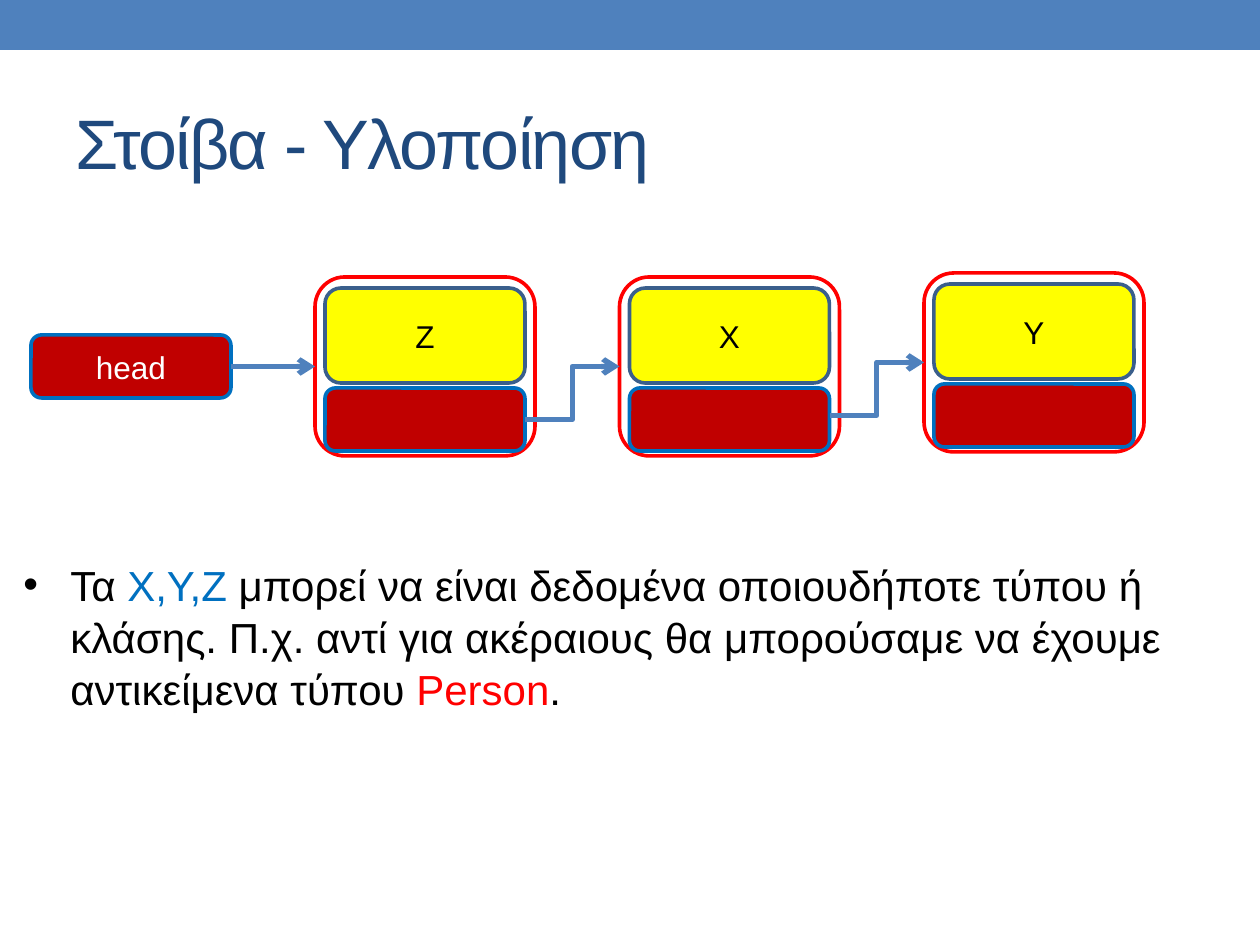
from lxml.etree import SubElement
from pptx import Presentation
from pptx.dml.color import RGBColor
from pptx.enum.shapes import MSO_CONNECTOR, MSO_SHAPE
from pptx.enum.text import MSO_ANCHOR, PP_ALIGN
from pptx.oxml.ns import qn
from pptx.util import Pt

BLUE = RGBColor(0x4F, 0x81, 0xBD)
NAVY = RGBColor(0x1F, 0x49, 0x7D)
SLATE = RGBColor(0x3A, 0x5F, 0x8C)
SKY = RGBColor(0x00, 0x70, 0xC0)
RED = RGBColor(0xFF, 0x00, 0x00)
CRIMSON = RGBColor(0xC0, 0x00, 0x00)
YELLOW = RGBColor(0xFF, 0xFF, 0x00)
BLACK = RGBColor(0x00, 0x00, 0x00)
WHITE = RGBColor(0xFF, 0xFF, 0xFF)

TITLE = "Στοίβα - Υλοποίηση"
HEAD = "head"
NODES = [("Z", 277), ("X", 277), ("Y", 273)]
NOTE = [
    ("Τα ", BLACK),
    ("Χ,Υ,Ζ ", SKY),
    ("μπορεί να είναι δεδομένα οποιουδήποτε τύπου ή κλάσης. "
     "Π.χ. αντί για ακέραιους θα μπορούσαμε να έχουμε αντικείμενα τύπου ", BLACK),
    ("Person", RED),
    (".", BLACK),
]

NODE_LEFT, NODE_STEP, NODE_WIDTH, NODE_HEIGHT = 315, 304.5, 220, 179
CELL_INSET, CELL_WIDTH, DATA_HEIGHT, LINK_HEIGHT = 10, 200, 95, 63
DATA_DROP, LINK_DROP, ELBOW_RISE = 11, 111, 53
HEAD_LEFT, HEAD_TOP = 31, 335


def px(value):
    return round(value * 914400 / 126)


def write(shape, runs, size, align=PP_ALIGN.LEFT, anchor=MSO_ANCHOR.MIDDLE,
          tracking=0, bullet=None, indent=0, spacing=None):
    frame = shape.text_frame
    frame.word_wrap = True
    frame.vertical_anchor = anchor
    para = frame.paragraphs[0]
    para.alignment = align
    if spacing:
        para.line_spacing = spacing
    if bullet:
        properties = para._p.get_or_add_pPr()
        properties.set("marL", str(px(indent)))
        properties.set("indent", str(-px(indent)))
        SubElement(properties, qn("a:buFont")).set("typeface", "Arial")
        SubElement(properties, qn("a:buChar")).set("char", bullet)
    for text, color in runs:
        span = para.add_run()
        span.text = text
        span.font.name = "Arial"
        span.font.size = Pt(size)
        span.font.color.rgb = color
        if tracking:
            span._r.get_or_add_rPr().set("spc", str(tracking * 100))


def add_box(shapes, left, top, width, height, fill=None, line=None,
            kind=MSO_SHAPE.ROUNDED_RECTANGLE):
    box = shapes.add_shape(kind, px(left), px(top), px(width), px(height))
    box.shadow.inherit = False
    if fill is None:
        box.fill.background()
    else:
        box.fill.solid()
        box.fill.fore_color.rgb = fill
    if line is None:
        box.line.fill.background()
    else:
        box.line.color.rgb = line
        box.line.width = Pt(2.08)
    return box


def add_arrow(shapes, kind, start, end):
    arrow = shapes.add_connector(kind, *map(px, start + end))
    arrow.line.color.rgb = BLUE
    arrow.line.width = Pt(3)
    SubElement(arrow.line._get_or_add_ln(), qn("a:tailEnd")).set("type", "arrow")
    SubElement(arrow._element.spPr, qn("a:effectLst"))


def add_node(page, label, left, top):
    shapes = page.shapes.add_group_shape().shapes
    cell_left = left + CELL_INSET
    add_box(shapes, left, top, NODE_WIDTH, NODE_HEIGHT, line=RED)
    add_box(shapes, cell_left, top + LINK_DROP, CELL_WIDTH, LINK_HEIGHT,
            fill=CRIMSON, line=SKY)
    data = add_box(shapes, cell_left, top + DATA_DROP, CELL_WIDTH, DATA_HEIGHT,
                   fill=YELLOW, line=SLATE)
    write(data, [(label, BLACK)], 18, align=PP_ALIGN.CENTER)


def main():
    deck = Presentation()
    deck.slide_width, deck.slide_height = px(1260), px(945)
    page = deck.slides.add_slide(deck.slide_layouts[6])
    shapes = page.shapes

    add_box(shapes, 0, 0, 1260, 50, fill=BLUE, kind=MSO_SHAPE.RECTANGLE)
    title = shapes.add_textbox(px(63), px(73), px(1134), px(136))
    write(title, [(TITLE, NAVY)], 40, tracking=-1)

    for index, (label, top) in enumerate(NODES):
        left = NODE_LEFT + index * NODE_STEP
        middle = top + NODE_HEIGHT / 2
        add_node(page, label, left, top)
        if index:
            start = left - NODE_STEP + CELL_INSET + CELL_WIDTH
            add_arrow(shapes, MSO_CONNECTOR.ELBOW,
                      (start, middle + ELBOW_RISE), (left, middle))

    head = add_box(shapes, HEAD_LEFT, HEAD_TOP, CELL_WIDTH, LINK_HEIGHT,
                   fill=CRIMSON, line=SKY)
    write(head, [(HEAD, WHITE)], 18, align=PP_ALIGN.CENTER)
    middle = HEAD_TOP + LINK_HEIGHT / 2
    add_arrow(shapes, MSO_CONNECTOR.STRAIGHT,
              (HEAD_LEFT + CELL_WIDTH, middle), (NODE_LEFT, middle))

    note = shapes.add_textbox(px(11), px(551), px(1250), px(165))
    write(note, NOTE, 24, anchor=MSO_ANCHOR.TOP, bullet="•", indent=47, spacing=1.04)

    deck.save("out.pptx")


if __name__ == "__main__":
    main()
